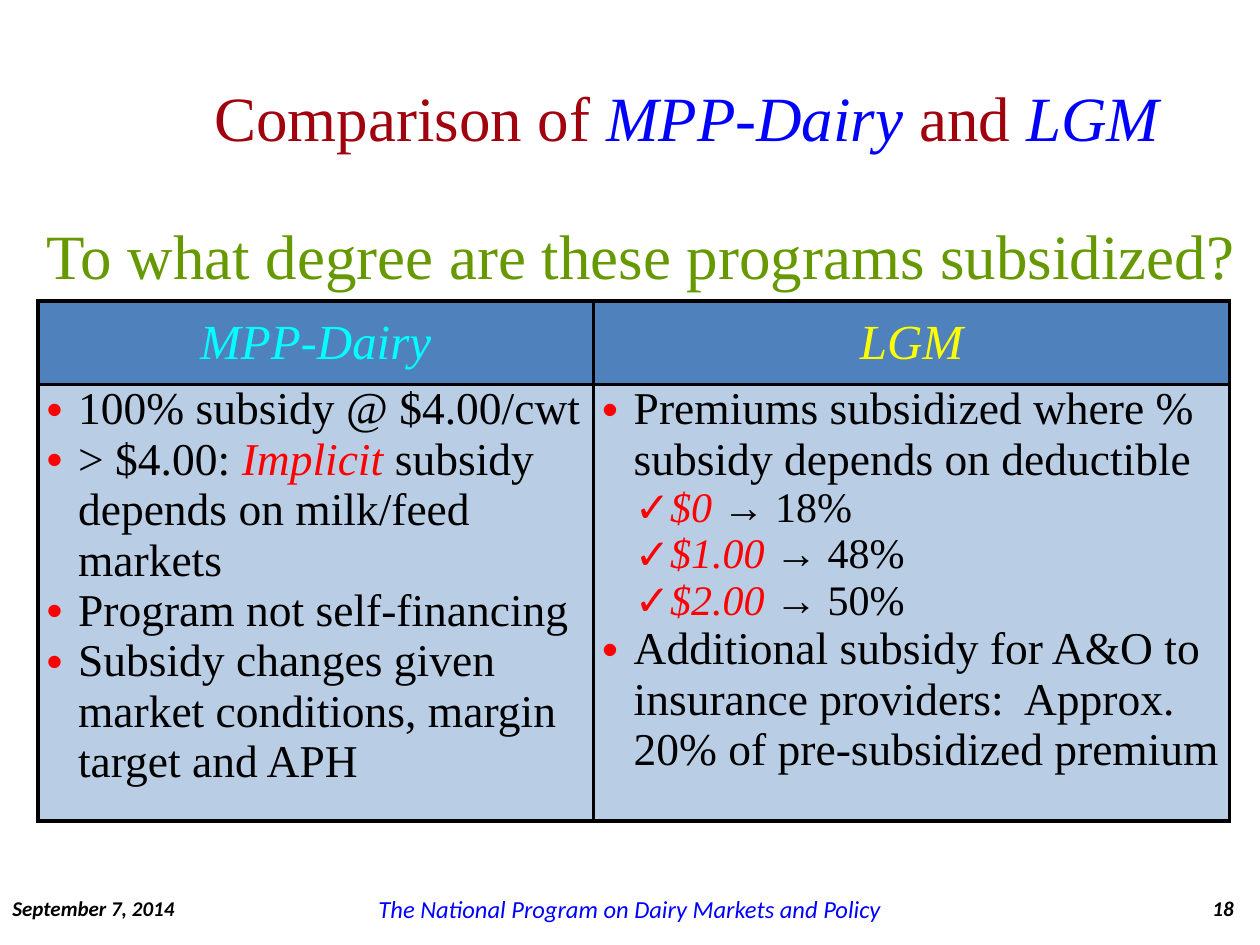
from dataclasses import dataclass

from lxml.etree import SubElement
from pptx import Presentation
from pptx.dml.color import RGBColor
from pptx.enum.text import MSO_ANCHOR, PP_ALIGN
from pptx.oxml.ns import qn
from pptx.util import Inches, Pt


@dataclass(frozen=True)
class Theme:
    serif: str = "Times New Roman"
    sans: str = "Calibri"
    black: str = "000000"
    title: str = "A0020E"
    blue: str = "0000FF"
    green: str = "669900"
    red: str = "FF0000"
    cyan: str = "00FFFF"
    yellow: str = "FFFF00"
    head_fill: str = "4F81BD"
    body_fill: str = "B9CDE5"
    border: float = 2.25
    title_size: int = 36
    head_size: int = 28
    list_size: int = 26
    sub_size: int = 24
    footer_size: int = 14
    small_size: int = 12


T = Theme()
COLS, ROWS = 100, 75  # slide grid
UNIT = Inches(0.1)


def grid(*cells):
    """Turn grid columns and rows into lengths."""
    return [round(c * UNIT) for c in cells]


def add_text(p, text, size=T.list_size, color=T.black, font=T.serif,
             bold=False, italic=False):
    r = p.add_run()
    r.text = text
    f = r.font
    f.name, f.size, f.bold, f.italic = font, Pt(size), bold, italic
    f.color.rgb = RGBColor.from_string(color)


def add_box(slide, at, text, align=PP_ALIGN.LEFT, anchor=MSO_ANCHOR.MIDDLE,
            wrap=True, **fmt):
    tf = slide.shapes.add_textbox(*grid(*at)).text_frame
    tf.word_wrap, tf.vertical_anchor = wrap, anchor
    tf.paragraphs[0].alignment = align
    add_text(tf.paragraphs[0], text, **fmt)


def add_color(parent, color):
    SubElement(SubElement(parent, qn("a:solidFill")), qn("a:srgbClr"), val=color)


def set_bullet(p, char, left, hanging=0.25):
    pPr = p._p.get_or_add_pPr()
    pPr.set("marL", str(Inches(left)))
    pPr.set("indent", str(-Inches(hanging)))
    SubElement(SubElement(pPr, qn("a:buClr")), qn("a:srgbClr"), val=T.red)
    SubElement(pPr, qn("a:buFont"), typeface="Arial")
    SubElement(pPr, qn("a:buChar"), char=char)


def style_cell(cell, fill):
    cell.margin_left = cell.margin_right = Inches(0.07)
    cell.margin_top = cell.margin_bottom = 0
    tcPr = cell._tc.get_or_add_tcPr()
    for side in ("lnL", "lnR", "lnT", "lnB"):
        add_color(SubElement(tcPr, qn(f"a:{side}"), w=str(Pt(T.border))), T.black)
    cell.fill.solid()
    cell.fill.fore_color.rgb = RGBColor.from_string(fill)


def fill_list(cell, items):
    """Each item is (is_sub, parts); emphasised parts are wrapped in a tuple."""
    tf = cell.text_frame
    for i, (is_sub, parts) in enumerate(items):
        p = tf.add_paragraph() if i else tf.paragraphs[0]
        set_bullet(p, "✓" if is_sub else "•", 0.51 if is_sub else 0.25)
        size = T.sub_size if is_sub else T.list_size
        for part in parts:
            if isinstance(part, tuple):
                add_text(p, part[0], size=size, color=T.red, italic=True)
            else:
                add_text(p, part, size=size)


def add_comparison(slide, at, widths, heights, columns):
    table = slide.shapes.add_table(2, len(columns), *grid(*at)).table
    for row, height in zip(table.rows, grid(*heights)):
        row.height = height
    for c, (width, (name, color, items)) in enumerate(zip(grid(*widths), columns)):
        table.columns[c].width = width
        head, body = table.cell(0, c), table.cell(1, c)
        style_cell(head, T.head_fill)
        style_cell(body, T.body_fill)
        head.vertical_anchor = MSO_ANCHOR.MIDDLE
        p = head.text_frame.paragraphs[0]
        p.alignment = PP_ALIGN.CENTER
        add_text(p, name, size=T.head_size, color=color, italic=True)
        fill_list(body, items)


def set_title(slide, at, parts):
    sp = slide.shapes.title
    sp.left, sp.top, sp.width, sp.height = grid(*at)
    tf = sp.text_frame
    tf.vertical_anchor = MSO_ANCHOR.MIDDLE
    p = tf.paragraphs[0]
    p.alignment = PP_ALIGN.CENTER
    for text, is_program in parts:
        add_text(p, text, size=T.title_size, italic=is_program,
                 color=T.blue if is_program else T.title)


def main():
    prs = Presentation()
    prs.slide_width, prs.slide_height = grid(COLS, ROWS)
    slide = prs.slides.add_slide(prs.slide_layouts[5])

    # Title and question
    set_title(slide, (14, 3, 81, 12.5), [
        ("Comparison of ", False), ("MPP-Dairy ", True),
        ("and ", False), ("LGM", True)])
    add_box(slide, (2.7, 16.7, 97.3, 7.1),
            "To what degree are these programs subsidized?",
            anchor=MSO_ANCHOR.TOP, wrap=False, size=T.title_size, color=T.green)

    # Comparison table
    mpp = [
        (False, ["100% subsidy @ $4.00/cwt"]),
        (False, ["> $4.00: ", ("Implicit",),
                 " subsidy depends on milk/feed markets"]),
        (False, ["Program not self-financing"]),
        (False, ["Subsidy changes given market conditions, "
                 "margin target and APH"]),
    ]
    rates = [("$0 ", "18%"), ("$1.00 ", "48%"), ("$2.00 ", "50%")]
    lgm = [
        (False, ["Premiums subsidized where % subsidy depends on deductible"]),
        *[(True, [(deductible,), f"→ {rate}"]) for deductible, rate in rates],
        (False, ["Additional subsidy for A&O to insurance providers:  "
                 "Approx. 20% of pre-subsidized premium"]),
    ]
    add_comparison(slide, (3, 23.9, 94.6, 38.6), (44.1, 50.5), (6.6, 32),
                   [("MPP-Dairy", T.cyan, mpp), ("LGM", T.yellow, lgm)])

    # Footer
    top, height = 70.9, 2.4
    small = dict(font=T.sans, size=T.small_size, bold=True, italic=True)
    add_box(slide, (0, top, 15.3, height), "September 7, 2014", **small)
    add_box(slide, (28.8, top, 42.4, height),
            "The National Program on Dairy Markets and Policy",
            align=PP_ALIGN.CENTER, font=T.sans, size=T.footer_size,
            color=T.blue, italic=True)
    add_box(slide, (91.1, top, 7.8, height), "18", align=PP_ALIGN.RIGHT, **small)

    prs.save("out.pptx")


if __name__ == "__main__":
    main()
